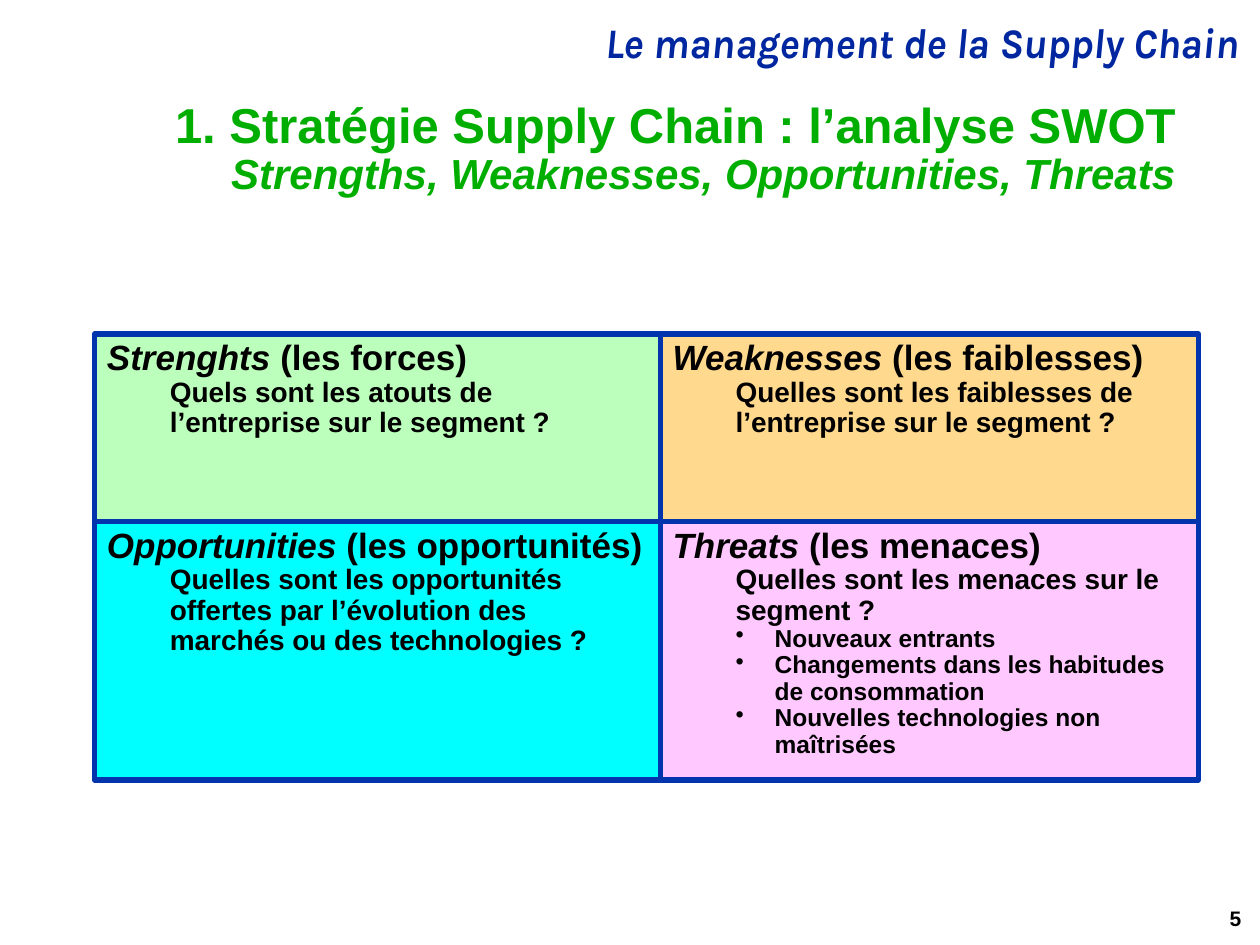
from lxml.etree import SubElement
from pptx import Presentation
from pptx.dml.color import RGBColor
from pptx.enum.shapes import MSO_SHAPE
from pptx.enum.text import MSO_ANCHOR, PP_ALIGN
from pptx.oxml.ns import qn
from pptx.util import Inches, Pt

NAVY = RGBColor(0x00, 0x27, 0x9F)
GREEN = RGBColor(0x00, 0xAE, 0x00)
BORDER = RGBColor(0x02, 0x34, 0xAD)
BLACK = RGBColor(0x00, 0x00, 0x00)
MINT = RGBColor(0xBC, 0xFF, 0xBC)
ORANGE = RGBColor(0xFF, 0xCC, 0x66)
CYAN = RGBColor(0x00, 0xFF, 0xFF)
PINK = RGBColor(0xFF, 0x99, 0xFF)

QUADRANTS = [
    ("Strenghts", " (les forces)",
     "Quels sont les atouts de l’entreprise sur le segment ?", [], MINT, 100),
    ("Weaknesses", " (les faiblesses)",
     "Quelles sont les faiblesses de l’entreprise sur le segment ?", [], ORANGE, 74),
    ("Opportunities", " (les opportunités)",
     "Quelles sont les opportunités offertes par l’évolution des marchés "
     "ou des technologies ?", [], CYAN, 100),
    ("Threats", " (les menaces)", "Quelles sont les menaces sur le segment ?",
     ["Nouveaux entrants", "Changements dans les habitudes de consommation",
      "Nouvelles technologies non maîtrisées"], PINK, 52),
]


def place(shape, box):
    """Move a shape to a box of left, top, width and height in inches."""
    shape.left, shape.top, shape.width, shape.height = map(Inches, box)


def style(paragraph, size, color=BLACK, align=PP_ALIGN.LEFT, name="Arial"):
    """Give a paragraph the bold, tightly spaced look of the slide."""
    paragraph.alignment = align
    paragraph.line_spacing = 0.9
    paragraph.space_before = Pt(0)
    font = paragraph.font
    font.name, font.size, font.bold = name, Pt(size), True
    font.color.rgb = color


def indent(paragraph, left, hanging=0, bullet=None):
    """Indent a second-level paragraph, with a hanging bullet if given."""
    paragraph.level = 1
    properties = paragraph._p.get_or_add_pPr()
    properties.set("marL", str(Inches(left)))
    properties.set("indent", str(-Inches(hanging)))
    if bullet:
        mark = SubElement(properties, qn("a:buChar"), char=bullet)
        properties.find(qn("a:defRPr")).addprevious(mark)


def add_label(slide, box, text, size, color=BLACK, name="Arial", italic=None):
    """Add a right-aligned, vertically centred line of text."""
    label = slide.shapes.add_textbox(*map(Inches, box)).text_frame
    label.word_wrap = True
    label.vertical_anchor = MSO_ANCHOR.MIDDLE
    line = label.paragraphs[0]
    line.text = text
    style(line, size, color, PP_ALIGN.RIGHT, name)
    line.font.italic = italic


def fill_title(slide, box):
    """Write the heading and its italic subtitle in the title placeholder."""
    title = slide.shapes.title
    place(title, box)
    title.text_frame.word_wrap = True
    title.text_frame.vertical_anchor = MSO_ANCHOR.MIDDLE
    heading = title.text_frame.paragraphs[0]
    style(heading, 28, GREEN, PP_ALIGN.RIGHT)
    heading.add_run().text = "1. Stratégie Supply Chain : l’analyse SWOT"
    heading.add_line_break()
    subtitle = heading.add_run()
    subtitle.text = "Strengths, Weaknesses, Opportunities, Threats"
    subtitle.font.size = Pt(24)
    subtitle.font.italic = True


def add_quadrant(slide, box, term, translation, question, examples, color, opacity):
    """Add one bordered SWOT quadrant with its question and examples."""
    quadrant = slide.shapes.add_shape(MSO_SHAPE.RECTANGLE, *map(Inches, box))
    quadrant.shadow.inherit = False
    quadrant.fill.solid()
    quadrant.fill.fore_color.rgb = color
    if opacity < 100:
        tint = quadrant._element.spPr.find(qn("a:solidFill"))[0]
        SubElement(tint, qn("a:alpha"), val=str(opacity * 1000))
    quadrant.line.color.rgb = BORDER
    quadrant.line.width = Pt(3)

    frame = quadrant.text_frame
    frame.word_wrap = True
    frame.vertical_anchor = MSO_ANCHOR.TOP
    heading = frame.paragraphs[0]
    style(heading, 20)
    english = heading.add_run()
    english.text = term
    english.font.italic = True
    heading.add_run().text = translation

    prompt = frame.add_paragraph()
    prompt.text = question
    style(prompt, 16)
    indent(prompt, 0.5)
    for example in examples:
        item = frame.add_paragraph()
        item.text = example
        style(item, 14)
        indent(item, 0.81, 0.31, "•")


def add_matrix(slide, left, top, widths, heights):
    """Lay out the four quadrants in a grid of two columns and two rows."""
    for index, quadrant in enumerate(QUADRANTS):
        row, column = divmod(index, 2)
        box = (left + sum(widths[:column]), top + sum(heights[:row]),
               widths[column], heights[row])
        add_quadrant(slide, box, *quadrant)


def main():
    """Build the SWOT slide and save it."""
    deck = Presentation()
    deck.slide_width, deck.slide_height = Inches(10), Inches(7.5)
    slide = deck.slides.add_slide(deck.slide_layouts[5])
    add_label(slide, (1.85, 0.13, 8.08, 0.46), "Le management de la Supply Chain",
              24, NAVY, "Karla", True)
    fill_title(slide, (0.28, 0.76, 9.15, 0.86))
    add_matrix(slide, 0.75, 2.65, (4.49, 4.27), (1.49, 2.05))
    add_label(slide, (7.7, 7.1, 2.25, 0.4), "5", 12)
    deck.save("out.pptx")


if __name__ == "__main__":
    main()
